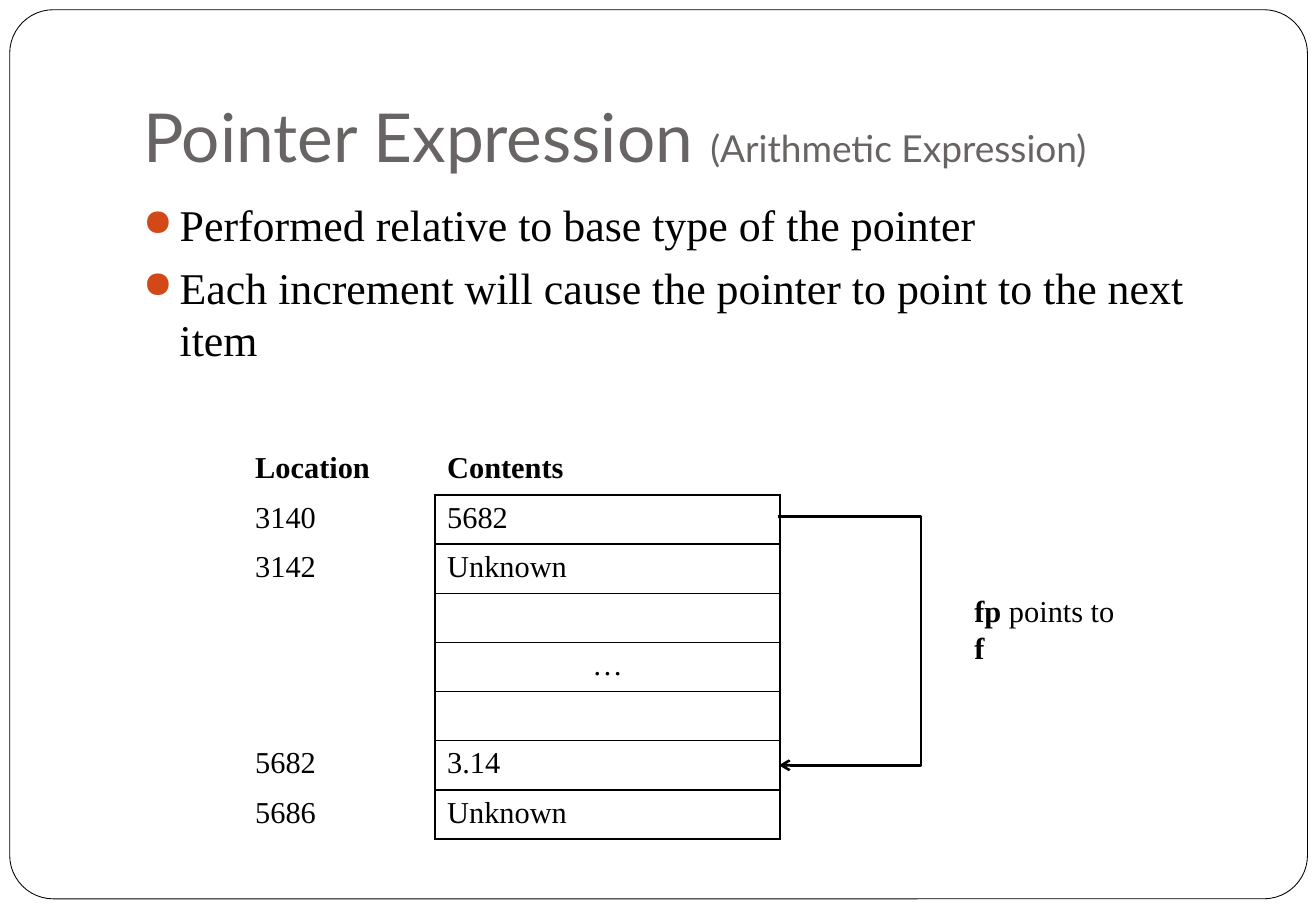
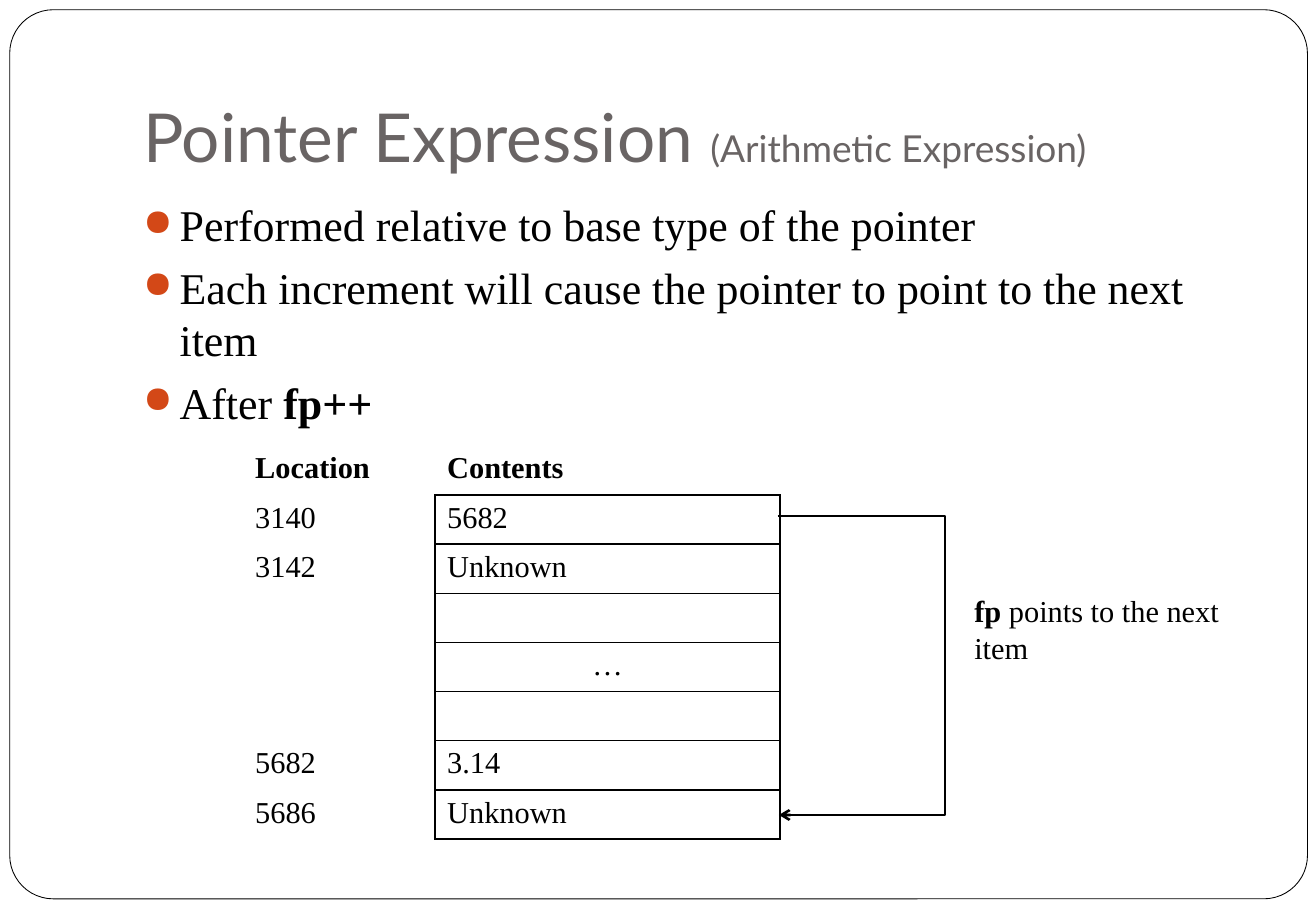
from lxml import etree
from pptx import Presentation
from pptx.dml.color import RGBColor
from pptx.enum.shapes import MSO_CONNECTOR, MSO_SHAPE
from pptx.enum.text import MSO_ANCHOR, PP_ALIGN
from pptx.oxml.ns import qn
from pptx.util import Inches, Pt

ROUNDED = MSO_SHAPE.ROUNDED_RECTANGLE
ELBOW = MSO_CONNECTOR.ELBOW
BOTTOM = MSO_ANCHOR.BOTTOM
CENTER = PP_ALIGN.CENTER

COLORS = {"paper": "FFFFFF", "ink": "000000", "title": "696464", "bullet": "D34817"}
TITLE_FONT = "Lato"
BODY_FONT = "Times New Roman"

TITLE = [("Pointer Expression ", 40), ("(Arithmetic Expression)", 22)]
POINTS = [
    [("Performed relative to base type of the pointer", False)],
    [("Each increment will cause the pointer to point to the next item", False)],
]
MEMORY = [
    ("Location", "Contents"),
    ("3140", "5682"),
    ("3142", "Unknown"),
    ("", ""),
    ("", "…"),
    ("", ""),
    ("5682", "3.14"),
    ("5686", "Unknown"),
]


def color(name):
    return RGBColor.from_string(COLORS[name])


def add_span(para, text, size, bold=False, font=BODY_FONT, tone="ink"):
    span = para.add_run()
    span.text = text
    span.font.size = Pt(size)
    span.font.bold = bold
    span.font.name = font
    span.font.color.rgb = color(tone)


def add_text_frame(page, left, top, width, height):
    box = page.shapes.add_textbox(Inches(left), Inches(top), Inches(width), Inches(height))
    box.text_frame.word_wrap = True
    return box.text_frame


def add_child(parent, tag, **attributes):
    return etree.SubElement(parent, qn(tag), attributes)


def set_bullet(para):
    props = para._p.get_or_add_pPr()
    props.set("marL", str(Inches(0.3)))
    props.set("indent", str(-Inches(0.3)))
    add_child(add_child(props, "a:buClr"), "a:srgbClr", val=COLORS["bullet"])
    add_child(props, "a:buSzPct", val="85000")
    add_child(props, "a:buChar", char="●")


def set_border(cell, side, visible):
    line = add_child(cell._tc.get_or_add_tcPr(), "a:ln" + side, w=str(Pt(1)))
    if visible:
        add_child(add_child(line, "a:solidFill"), "a:srgbClr", val=COLORS["ink"])
    else:
        add_child(line, "a:noFill")


# Rounded frame around the page
def add_frame(page):
    frame = page.shapes.add_shape(ROUNDED, Inches(0.08), Inches(0.08),
                                  Inches(10.68), Inches(7.32))
    frame.adjustments[0] = 0.049
    frame.shadow.inherit = False
    frame.fill.solid()
    frame.fill.fore_color.rgb = color("paper")
    frame.line.color.rgb = color("ink")
    frame.line.width = Pt(0.5)


def add_title(page, left, top, width, height):
    frame = add_text_frame(page, left, top, width, height)
    frame.vertical_anchor = BOTTOM
    frame.margin_bottom = Inches(0.1)
    for text, size in TITLE:
        add_span(frame.paragraphs[0], text, size, font=TITLE_FONT, tone="title")


def add_points(page, points, left, top, width, height):
    frame = add_text_frame(page, left, top, width, height)
    for index, spans in enumerate(points):
        para = frame.add_paragraph() if index else frame.paragraphs[0]
        para.space_before = Pt(5.8)
        set_bullet(para)
        for text, bold in spans:
            add_span(para, text, 26, bold)


# Memory table: only the contents below the header are boxed
def add_memory(page, left, top, width, height):
    rows = len(MEMORY)
    table = page.shapes.add_table(rows, 2, Inches(left), Inches(top),
                                  Inches(width), Inches(height)).table
    table.first_row = table.horz_banding = False
    table.columns[0].width = Inches(1.58)
    table.columns[1].width = Inches(width - 1.58)
    for r, texts in enumerate(MEMORY):
        table.rows[r].height = Inches(height / rows)
        for c, text in enumerate(texts):
            cell = table.cell(r, c)
            header, contents = r == 0, c == 1
            boxed = contents and not header
            edges = {"L": boxed, "R": not header, "T": boxed,
                     "B": contents}
            for side, visible in edges.items():
                set_border(cell, side, visible)
            cell.fill.background()
            para = cell.text_frame.paragraphs[0]
            if text:
                add_span(para, text, 18, header)
            if text == "…":
                para.alignment = CENTER


# Arrow that leaves the pointer's row and returns to its target
def add_pointer(page, left, top, bottom, reach):
    span = 0.01
    arrow = page.shapes.add_connector(ELBOW, Inches(left), Inches(top),
                                      Inches(left + span), Inches(bottom))
    arrow.line.color.rgb = color("ink")
    arrow.line.width = Pt(1.5)
    props = arrow._element.spPr
    guides = props.find(qn("a:prstGeom")).get_or_add_avLst()
    add_child(guides, "a:gd", name="adj1", fmla=f"val {round(reach / span * 100000)}")
    add_child(arrow.line._get_or_add_ln(), "a:tailEnd", type="arrow")
    add_child(props, "a:effectLst")


def add_label(page, spans, left, top, width):
    frame = add_text_frame(page, left, top, width, 0.4)
    for text, bold in spans:
        add_span(frame.paragraphs[0], text, 18, bold)


def add_pointer_page(deck, points, label, label_width, target, reach):
    page = deck.slides.add_slide(deck.slide_layouts[6])
    add_frame(page)
    add_title(page, 1.08, 0.3, 9.21, 1.25)
    add_points(page, points, 1.08, 1.58, 9.21, 5)
    add_memory(page, 2, 3.67, 4.42, 3.24)
    add_label(page, label, 7.92, 4.83, label_width)
    add_pointer(page, 6.4, 4.25, target, reach)


def main():
    deck = Presentation()
    deck.slide_width, deck.slide_height = Inches(10.83), Inches(7.5)
    add_pointer_page(deck, POINTS,
                     [("fp", True), (" points to ", False), ("f", True)],
                     1.42, 6.3, 1.2)
    add_pointer_page(deck, POINTS + [[("After ", False), ("fp++", True)]],
                     [("fp", True), (" points to the next item", False)],
                     2.64, 6.71, 1.4)
    deck.save("out.pptx")


if __name__ == "__main__":
    main()
